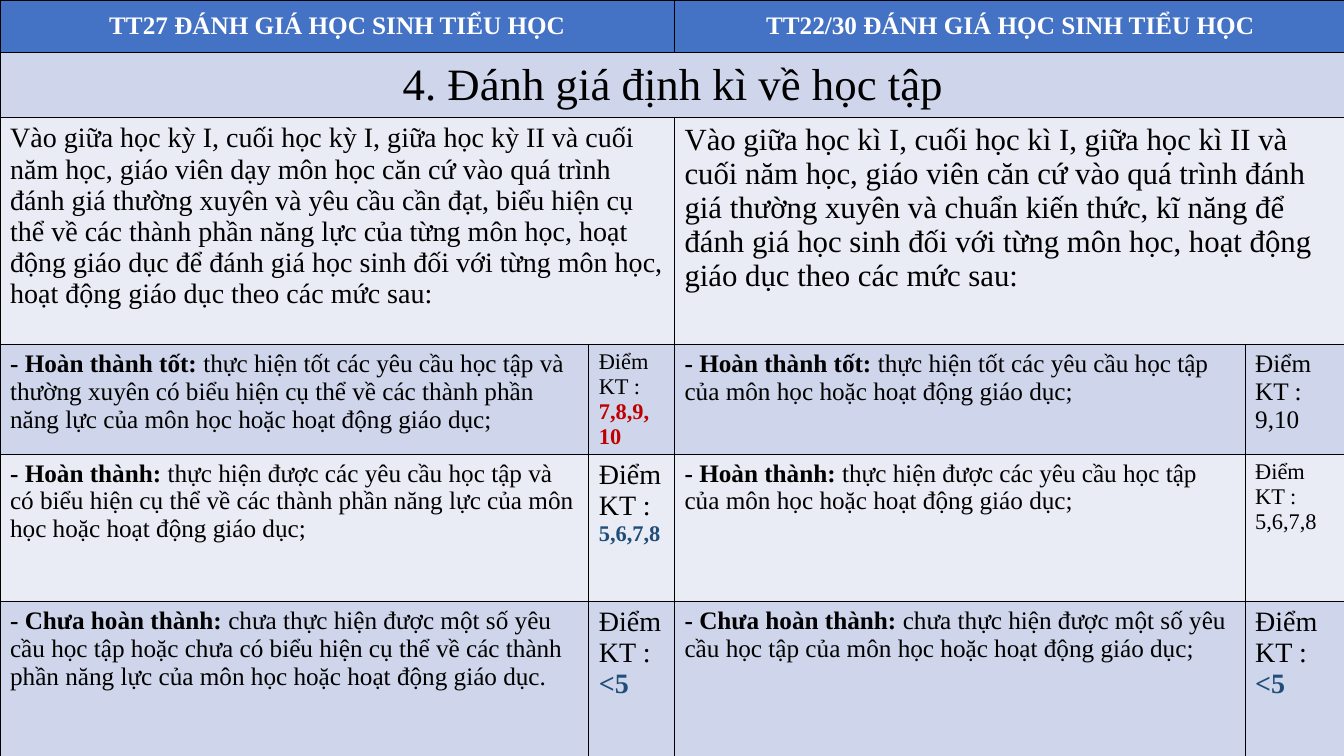
from lxml import etree
from pptx import Presentation
from pptx.dml.color import RGBColor
from pptx.enum.text import MSO_ANCHOR, PP_ALIGN
from pptx.oxml.ns import qn
from pptx.util import Inches, Pt

CENTER, LEFT = PP_ALIGN.CENTER, PP_ALIGN.LEFT
MIDDLE, TOP = MSO_ANCHOR.MIDDLE, MSO_ANCHOR.TOP
FONT = "Times New Roman"
COLORS = {
    "header": "4472C4", "dark_band": "CFD5EA", "light_band": "E9EBF5",
    "white": "FFFFFF", "black": "000000", "red": "C00000", "blue": "1F4E79",
}
COL_WIDTHS = [5.84, 0.85, 5.66, 1]
ROW_HEIGHTS = [0.52, 0.65, 2.25, 1.09, 1.46, 1.86]
HEADERS = ["TT27 ĐÁNH GIÁ HỌC SINH TIỂU HỌC", "TT22/30 ĐÁNH GIÁ HỌC SINH TIỂU HỌC"]
TITLE = "4. Đánh giá định kì về học tập"
INTROS = [
    ("Vào giữa học kỳ I, cuối học kỳ I, giữa học kỳ II và cuối năm học, giáo viên dạy môn học "
     "căn cứ vào quá trình đánh giá thường xuyên và yêu cầu cần đạt, biểu hiện cụ thể về các "
     "thành phần năng lực của từng môn học, hoạt động giáo dục để đánh giá học sinh đối với "
     "từng môn học, hoạt động giáo dục theo các mức sau:", 20),
    ("Vào giữa học kì I, cuối học kì I, giữa học kì II và cuối năm học, giáo viên căn cứ vào "
     "quá trình đánh giá thường xuyên và chuẩn kiến thức, kĩ năng để đánh giá học sinh đối với "
     "từng môn học, hoạt động giáo dục theo các mức sau:", 22),
]
SCORE_LABEL = "Điểm KT :"
# Each level: name, then (description, label size, score lines, score size, colour, bold) per circular
LEVELS = [
    ("- Hoàn thành tốt: ", [
        ("thực hiện tốt các yêu cầu học tập và thường xuyên có biểu hiện cụ thể về các thành phần "
         "năng lực của môn học hoặc hoạt động giáo dục;", 16, ["7,8,9,", "10"], 16, "red", True),
        ("thực hiện tốt các yêu cầu học tập của môn học hoặc hoạt động giáo dục;",
         18, ["9,10"], 18, "black", False)]),
    ("- Hoàn thành: ", [
        ("thực hiện được các yêu cầu học tập và có biểu hiện cụ thể về các thành phần năng lực "
         "của môn học hoặc hoạt động giáo dục;", 20, ["5,6,7,8"], 16, "blue", True),
        ("thực hiện được các yêu cầu học tập của môn học hoặc hoạt động giáo dục;",
         16, ["5,6,7,8"], 16, "black", False)]),
    ("- Chưa hoàn thành: ", [
        ("chưa thực hiện được một số yêu cầu học tập hoặc chưa có biểu hiện cụ thể về các thành "
         "phần năng lực của môn học hoặc hoạt động giáo dục.", 20, ["<5"], 20, "blue", True),
        ("chưa thực hiện được một số yêu cầu học tập của môn học hoặc hoạt động giáo dục;",
         20, ["<5"], 20, "blue", True)]),
]


def style_cell(cell, fill):
    """Give a cell thin black borders and a solid fill."""
    tcPr = cell._tc.get_or_add_tcPr()
    for side in ("lnL", "lnR", "lnT", "lnB"):
        ln = etree.SubElement(tcPr, qn(f"a:{side}"), w=str(Pt(1)))
        solid = etree.SubElement(ln, qn("a:solidFill"))
        etree.SubElement(solid, qn("a:srgbClr"), val=COLORS["black"])
    cell.fill.solid()
    cell.fill.fore_color.rgb = RGBColor.from_string(COLORS[fill])


def write_cell(cell, paragraphs, align=LEFT, anchor=TOP):
    """Write paragraphs, each a list of (text, size, colour, bold) runs."""
    cell.vertical_anchor = anchor
    tf = cell.text_frame
    for i, runs in enumerate(paragraphs):
        p = tf.add_paragraph() if i else tf.paragraphs[0]
        p.alignment = align
        for text, size, color, bold in runs:
            r = p.add_run()
            r.text = text
            r.font.name = FONT
            r.font.size = Pt(size)
            r.font.bold = bold
            r.font.color.rgb = RGBColor.from_string(COLORS[color])


def add_grid(s, left, top, width, height):
    """Add the styled, empty comparison table and return it."""
    table = s.shapes.add_table(len(ROW_HEIGHTS), len(COL_WIDTHS), Inches(left), Inches(top),
                               Inches(width), Inches(height)).table
    table.first_row = table.horz_banding = False
    for column, w in zip(table.columns, COL_WIDTHS):
        column.width = Inches(w)
    for i, (row, h) in enumerate(zip(table.rows, ROW_HEIGHTS)):
        row.height = Inches(h)
        fill = "header" if i == 0 else "dark_band" if i % 2 else "light_band"
        for cell in row.cells:
            style_cell(cell, fill)
    return table


def fill_heading_rows(table):
    """Merge and fill the header, title and introduction rows."""
    table.cell(1, 0).merge(table.cell(1, 3))
    write_cell(table.cell(1, 0), [[(TITLE, 32, "black", False)]], CENTER, MIDDLE)
    for side, (header, (intro, size)) in enumerate(zip(HEADERS, INTROS)):
        col = 2 * side
        for row in (0, 2):
            table.cell(row, col).merge(table.cell(row, col + 1))
        write_cell(table.cell(0, col), [[(header, 18, "white", True)]], CENTER, MIDDLE)
        write_cell(table.cell(2, col), [[(intro, size, "black", False)]])


def fill_level_rows(table):
    """Fill the description and score cells of each achievement level."""
    for row, (name, sides) in enumerate(LEVELS, start=3):
        for side, (description, label_size, scores, size, color, bold) in enumerate(sides):
            write_cell(table.cell(row, 2 * side),
                       [[(name, 18, "black", True), (description, 18, "black", False)]])
            write_cell(table.cell(row, 2 * side + 1),
                       [[(SCORE_LABEL, label_size, "black", False)]]
                       + [[(score, size, color, bold)] for score in scores])


def main():
    """Build the slide and save it."""
    prs = Presentation()
    prs.slide_width, prs.slide_height = Inches(13.33), Inches(7.5)
    s = prs.slides.add_slide(prs.slide_layouts[6])
    table = add_grid(s, 0, 0, sum(COL_WIDTHS), sum(ROW_HEIGHTS))
    fill_heading_rows(table)
    fill_level_rows(table)
    prs.save("out.pptx")


if __name__ == "__main__":
    main()
